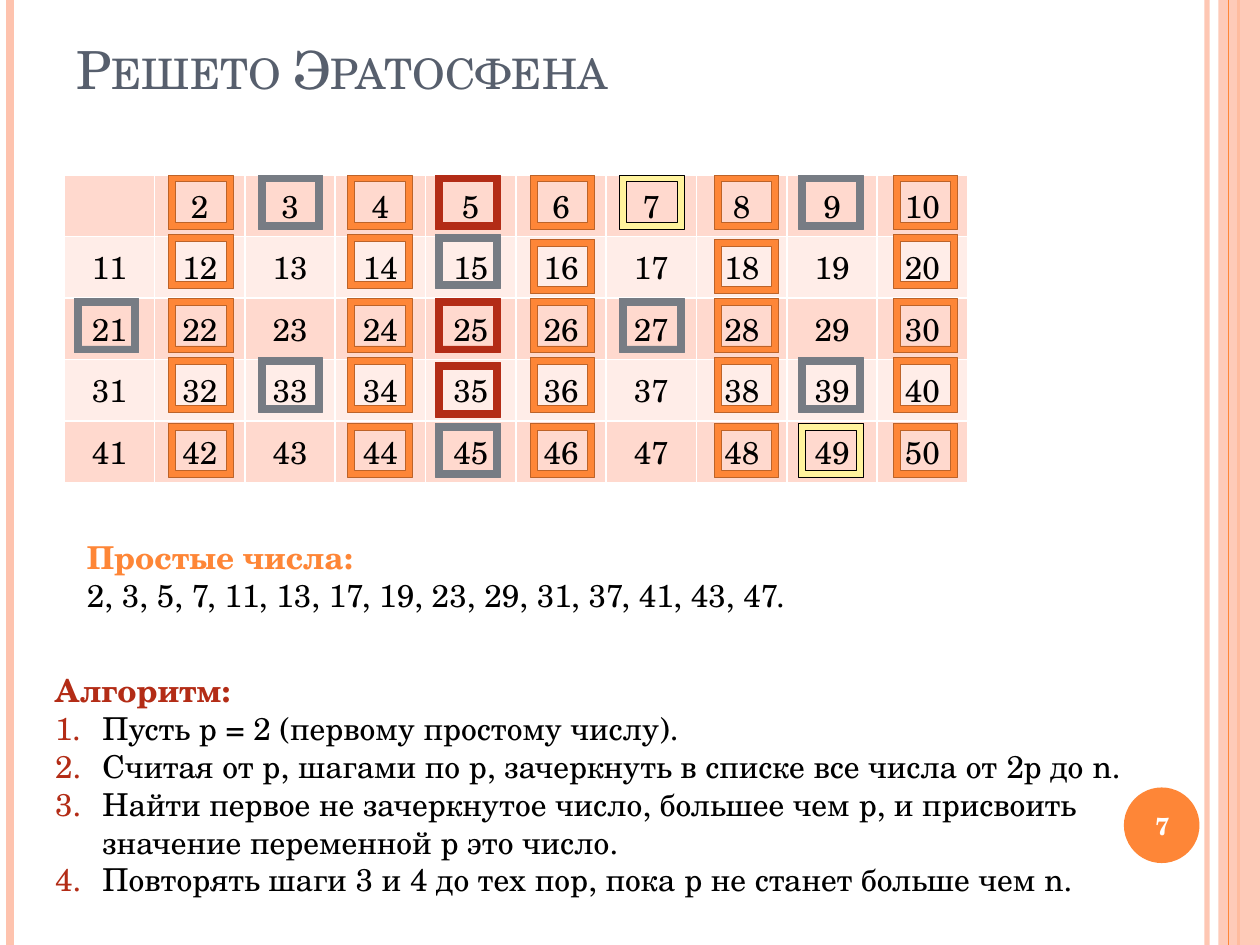
from dataclasses import dataclass
from typing import NamedTuple, Optional

from lxml.etree import SubElement
from pptx import Presentation
from pptx.dml.color import RGBColor
from pptx.enum.shapes import MSO_CONNECTOR as Conn, MSO_SHAPE as Shape
from pptx.enum.text import MSO_ANCHOR as Anchor, MSO_AUTO_SIZE as Fit, PP_ALIGN as Align
from pptx.oxml.ns import qn
from pptx.util import Inches, Pt

# Slide grid: 100 columns by 75 rows, one unit is a tenth of an inch
COLS, ROWS = 100, 75


@dataclass(frozen=True)
class Theme:
    font: str = "TeX Gyre Schola"
    title: str = "575F6D"
    text: str = "000000"
    white: str = "FFFFFF"
    orange: str = "FE8637"
    orange_edge: str = "BC6329"
    peach: str = "FEC3AE"
    gray: str = "777C84"
    red: str = "B32C16"
    yellow: str = "FFF39D"
    bands: tuple = ("FFD9CE", "FFEDE8")
    title_size: int = 30
    body_size: int = 18
    number_size: int = 14


class Box(NamedTuple):
    x: float
    y: float
    w: float
    h: float


class Rail(NamedTuple):
    x: float
    color: str
    width: float
    opacity: int = 100


class Mark(NamedTuple):
    fill: str
    edge: str


T = Theme()

# Sieve: each crossed number takes the mark of its smallest prime factor
MARKS = {
    2: Mark(T.orange, T.orange_edge),
    3: Mark(T.gray, T.gray),
    5: Mark(T.red, T.red),
    7: Mark(T.yellow, T.text),
}
PER_ROW, LAST = 10, 50
SIEVE = Box(5.1, 13.9, 71.7, 24.4)
FRAME_X = (5.9, 13.4, 20.5, 27.6, 34.6, 42.1, 49.2, 56.7, 63.4, 70.9)
FRAME_Y = (13.9, 18.6, 23.7, 28.4, 33.6)
FRAME_W, FRAME_H = 5.1, 4.3
LOWERED = {16, 18, 35}

PRIMES = "2, 3, 5, 7, 11, 13, 17, 19, 23, 29, 31, 37, 41, 43, 47."
STEPS = (
    "Пусть p = 2 (первому простому числу).",
    "Считая от р, шагами по р, зачеркнуть в списке все числа от 2р до n.",
    "Найти первое не зачеркнутое число, большее чем p, и присвоить значение переменной p это число.",
    "Повторять шаги 3 и 4 до тех пор, пока p не станет больше чем n.",
)


def u(n: float) -> int:
    return Inches(n / 10)


def place(box: Box) -> list:
    return [u(n) for n in box]


def set_opacity(fill_parent, percent: int) -> None:
    if percent < 100:
        clr = fill_parent.find(qn("a:solidFill"))[0]
        SubElement(clr, qn("a:alpha"), val=str(percent * 1000))


def add_rail(s, rail: Rail) -> None:
    c = s.shapes.add_connector(Conn.STRAIGHT, u(rail.x), 0, u(rail.x), u(ROWS))
    c.line.color.rgb = RGBColor.from_string(rail.color)
    c.line.width = Pt(rail.width)
    sp_pr = c._element.spPr
    set_opacity(sp_pr.find(qn("a:ln")), rail.opacity)
    SubElement(sp_pr, qn("a:effectLst"))


def add_shape(s, kind, box: Box, fill: str, edge: Optional[str] = None, opacity: int = 100) -> None:
    sp = s.shapes.add_shape(kind, *place(box))
    sp.shadow.inherit = False
    sp.fill.solid()
    sp.fill.fore_color.rgb = RGBColor.from_string(fill)
    set_opacity(sp._element.spPr, opacity)
    if edge:
        sp.line.color.rgb = RGBColor.from_string(edge)
        sp.line.width = Pt(0.5)
    else:
        sp.line.fill.background()


def add_text(p, text: str, *, size: int = T.body_size, color: str = T.text,
             bold: bool = False, align=Align.LEFT, small_caps: bool = False) -> None:
    p.alignment = align
    r = p.add_run()
    r.text = text
    r.font.name, r.font.size, r.font.bold = T.font, Pt(size), bold
    r.font.color.rgb = RGBColor.from_string(color)
    if small_caps:
        r.font._element.set("cap", "small")


def add_frame_text(s, box: Box, anchor=Anchor.TOP, wrap: bool = True, fit=Fit.NONE):
    tf = s.shapes.add_textbox(*place(box)).text_frame
    tf.word_wrap, tf.vertical_anchor, tf.auto_size = wrap, anchor, fit
    return tf


def number_paragraph(p, color: str) -> None:
    p_pr = p._p.get_or_add_pPr()
    p_pr.set("marL", str(u(3.75)))
    p_pr.set("indent", str(-u(3.75)))
    SubElement(SubElement(p_pr, qn("a:buClr")), qn("a:srgbClr"), val=color)
    SubElement(p_pr, qn("a:buFont"), typeface="+mj-lt")
    SubElement(p_pr, qn("a:buAutoNum"), type="arabicPeriod")


def style_cell(cell, fill: str) -> None:
    tc_pr = cell._tc.get_or_add_tcPr()
    for side in ("lnL", "lnR", "lnT", "lnB"):
        ln = SubElement(tc_pr, qn(f"a:{side}"), w=str(Pt(1)))
        SubElement(SubElement(ln, qn("a:solidFill")), qn("a:srgbClr"), val=T.white)
    cell.fill.solid()
    cell.fill.fore_color.rgb = RGBColor.from_string(fill)
    cell.vertical_anchor = Anchor.MIDDLE


def add_sieve(s) -> None:
    rows = LAST // PER_ROW
    table = s.shapes.add_table(rows, PER_ROW, *place(SIEVE)).table
    table.first_row = table.horz_banding = False
    for col in table.columns:
        col.width = u(SIEVE.w / PER_ROW)
    for row in table.rows:
        row.height = u(SIEVE.h / rows)
    for n in range(1, LAST + 1):
        row, col = divmod(n - 1, PER_ROW)
        cell = table.cell(row, col)
        style_cell(cell, T.bands[row % 2])
        if n > 1:
            add_text(cell.text_frame.paragraphs[0], str(n), align=Align.CENTER)


def add_marks(s) -> None:
    for n in range(2, LAST + 1):
        factor = next((f for f in MARKS if n % f == 0), None)
        if factor:
            row, col = divmod(n - 1, PER_ROW)
            y = FRAME_Y[row] + (0.4 if n in LOWERED else 0)
            add_shape(s, Shape.FRAME, Box(FRAME_X[col], y, FRAME_W, FRAME_H), *MARKS[factor])


def main() -> None:
    prs = Presentation()
    prs.slide_width, prs.slide_height = u(COLS), u(ROWS)
    s = prs.slides.add_slide(prs.slide_layouts[6])

    # Side rails and page number
    for rail in (Rail(95.8, T.peach, 3, 93), Rail(0.8, T.peach, 4.5), Rail(98.3, T.orange, 1.5)):
        add_rail(s, rail)
    add_shape(s, Shape.RECTANGLE, Box(96.7, 0, 3.3, ROWS), T.peach, opacity=87)
    add_rail(s, Rail(97.5, T.orange, 0.75))
    add_shape(s, Shape.OVAL, Box(89.2, 62.5, 6, 6), T.orange)
    tf = add_frame_text(s, Box(88.9, 62.7, 6.7, 5.7), Anchor.MIDDLE)
    add_text(tf.paragraphs[0], "7", size=T.number_size, color=T.white, bold=True, align=Align.CENTER)

    # Title
    tf = add_frame_text(s, Box(5.1, 0, 74.9, 8.4), Anchor.BOTTOM)
    add_text(tf.paragraphs[0], "Решето Эратосфена", size=T.title_size, color=T.title, small_caps=True)

    # Number table with its marks
    add_sieve(s)
    add_marks(s)

    # Algorithm
    tf = add_frame_text(s, Box(3.4, 52.8, 94.3, 22.2), fit=Fit.SHAPE_TO_FIT_TEXT)
    add_text(tf.paragraphs[0], "Алгоритм:", color=T.red, bold=True)
    for step in STEPS:
        p = tf.add_paragraph()
        add_text(p, step)
        number_paragraph(p, T.red)

    # Primes found
    tf = add_frame_text(s, Box(5.9, 42.2, 60.2, 7.1), wrap=False, fit=Fit.SHAPE_TO_FIT_TEXT)
    add_text(tf.paragraphs[0], "Простые числа:", color=T.orange, bold=True)
    add_text(tf.add_paragraph(), PRIMES)

    prs.save("out.pptx")


if __name__ == "__main__":
    main()
